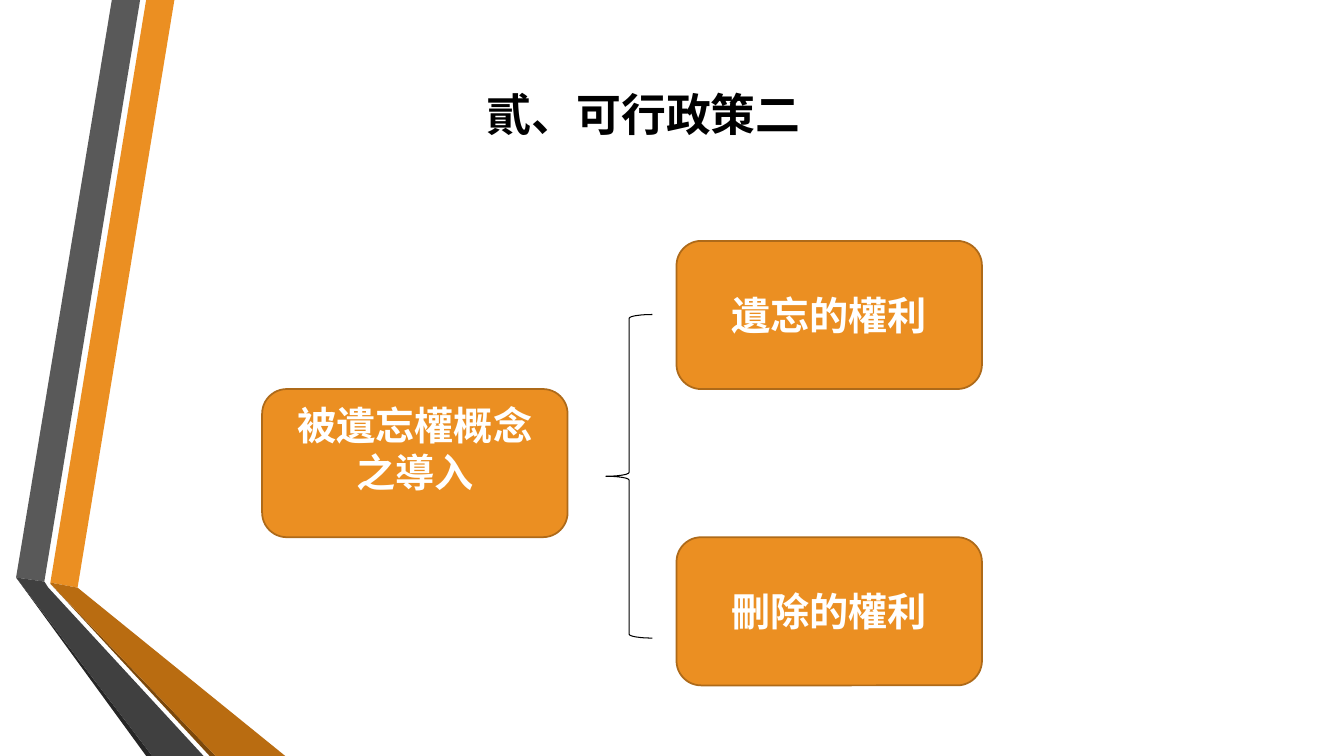
from pptx import Presentation
from pptx.dml.color import RGBColor
from pptx.enum.shapes import MSO_SHAPE as Preset
from pptx.enum.text import MSO_ANCHOR as Anchor, PP_ALIGN as Align
from pptx.util import Inches, Pt

FONT = "Calibri"
ORANGE, OUTLINE, BLACK, WHITE = "EB8F22", "AE6A19", "000000", "FFFFFF"

TITLE = "貳、可行政策二"
CONCEPT = "被遺忘權概念之導入"
RIGHTS = ["遺忘的權利", "刪除的權利"]

RIBBONS = [
    (ORANGE, [(0.5, 5.78), (0.77, 5.83), (1.73, 0), (1.45, 0)]),
    ("595959", [(1.39, 0), (1.11, 0), (0.16, 5.73), (0.44, 5.77)]),
    ("262626", [(0.16, 5.73), (1.45, 7.5), (1.51, 7.5)]),
    ("7B480B", [(0.5, 5.79), (2.08, 7.5), (2.14, 7.5)]),
    ("B96C11", [(0.5, 5.79), (2.14, 7.5), (2.83, 7.5), (0.77, 5.83), (0.5, 5.78)]),
    ("404040", [(2.02, 7.5), (0.48, 5.83), (0.44, 5.77), (0.16, 5.73), (1.51, 7.5)]),
]

BOX_WIDTH, BOX_HEIGHT = 3.03, 1.47
CONCEPT_LEFT, RIGHTS_LEFT, RIGHTS_TOP = 2.6, 6.71, 2.39


def color(hex_string):
    return RGBColor.from_string(hex_string)


def paint(shape, fill=None, line=None, width=1.25):
    shape.shadow.inherit = False
    if fill:
        shape.fill.solid()
        shape.fill.fore_color.rgb = color(fill)
    else:
        shape.fill.background()
    if line:
        shape.line.color.rgb = color(line)
        shape.line.width = Pt(width)
    else:
        shape.line.fill.background()


def write(shape, text, size=28, ink=WHITE, anchor=Anchor.MIDDLE, bottom=0.05):
    frame = shape.text_frame
    frame.word_wrap = True
    frame.vertical_anchor = anchor
    frame.margin_bottom = Inches(bottom)
    paragraph = frame.paragraphs[0]
    paragraph.alignment = Align.CENTER
    run = paragraph.add_run()
    run.text = text
    run.font.name = FONT
    run.font.size = Pt(size)
    run.font.bold = True
    run.font.color.rgb = color(ink)


def add_preset(slide, preset, left, top, width, height):
    return slide.shapes.add_shape(
        preset, Inches(left), Inches(top), Inches(width), Inches(height))


def add_ribbon(slide, fill, points):
    corners = [(Inches(x), Inches(y)) for x, y in points]
    builder = slide.shapes.build_freeform(*corners[0])
    builder.add_line_segments(corners[1:], close=True)
    paint(builder.convert_to_shape(), fill)


def add_box(slide, text, left, top, **text_format):
    box = add_preset(slide, Preset.ROUNDED_RECTANGLE, left, top, BOX_WIDTH, BOX_HEIGHT)
    paint(box, ORANGE, OUTLINE)
    write(box, text, **text_format)


def main():
    presentation = Presentation()
    presentation.slide_width = Inches(13.33)
    presentation.slide_height = Inches(7.5)
    slide = presentation.slides.add_slide(presentation.slide_layouts[6])

    for fill, points in RIBBONS:
        add_ribbon(slide, fill, points)

    title = slide.shapes.add_textbox(
        Inches(3.04), Inches(0.81), Inches(6.69), Inches(0.94))
    write(title, TITLE, size=32, ink=BLACK, anchor=Anchor.TOP)

    add_box(slide, CONCEPT, CONCEPT_LEFT, RIGHTS_TOP + BOX_HEIGHT, bottom=0.35)
    for index, right in enumerate(RIGHTS):
        add_box(slide, right, RIGHTS_LEFT, RIGHTS_TOP + index * 2 * BOX_HEIGHT)

    brace = add_preset(slide, Preset.LEFT_BRACE, 6.01, 3.12, 0.46, 3.21)
    paint(brace, line=BLACK, width=0.75)

    presentation.save("out.pptx")


if __name__ == "__main__":
    main()
